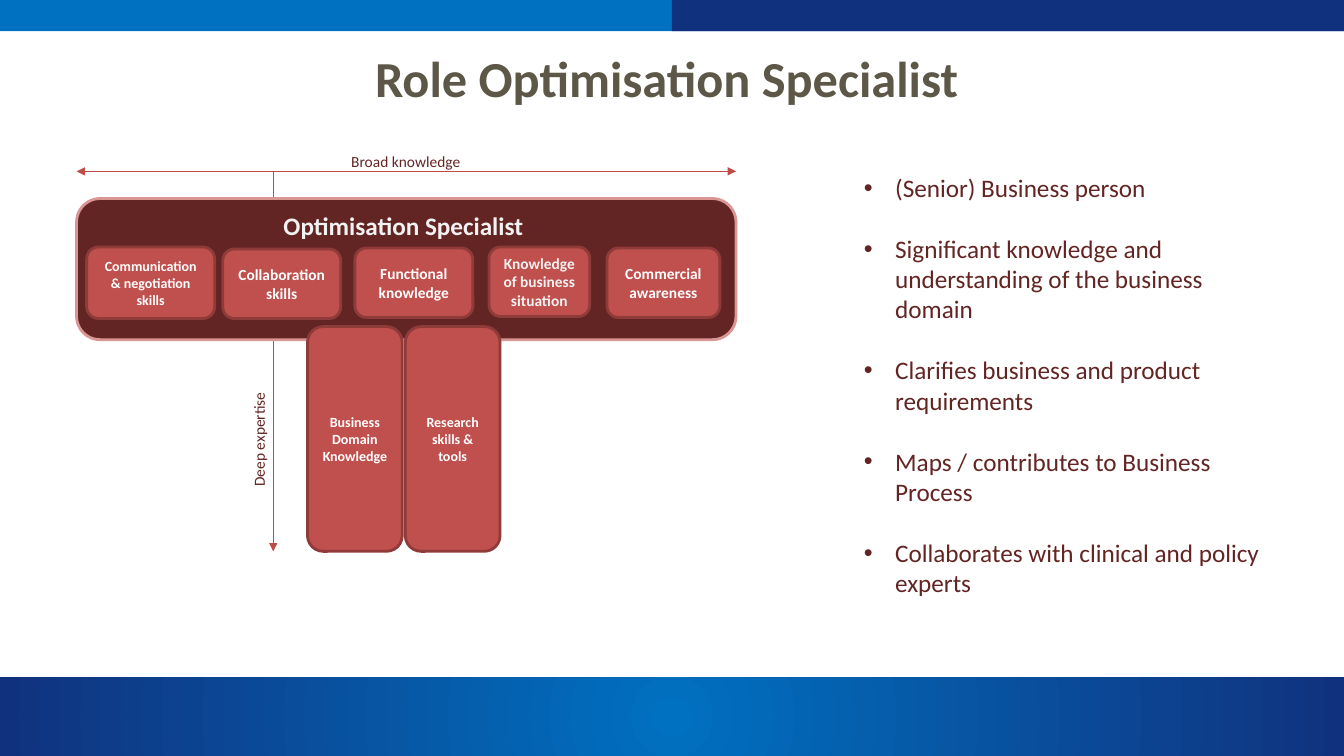
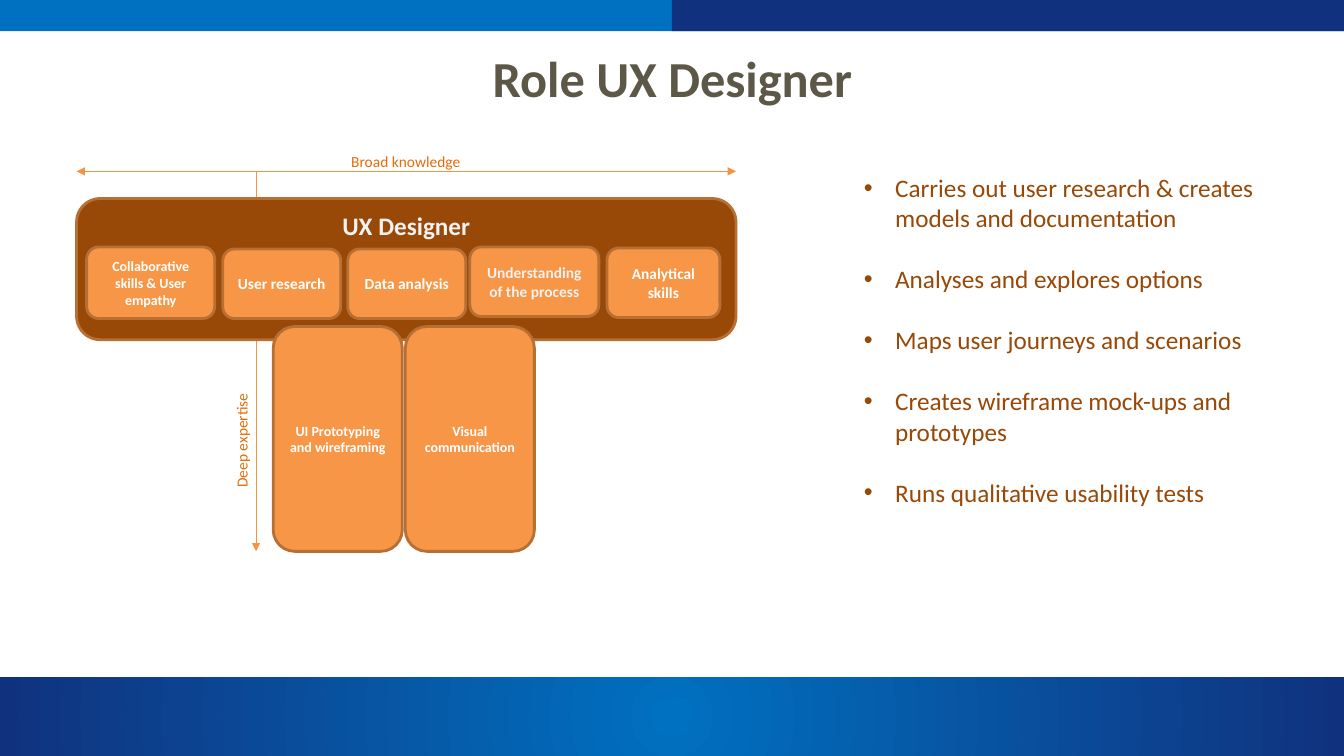
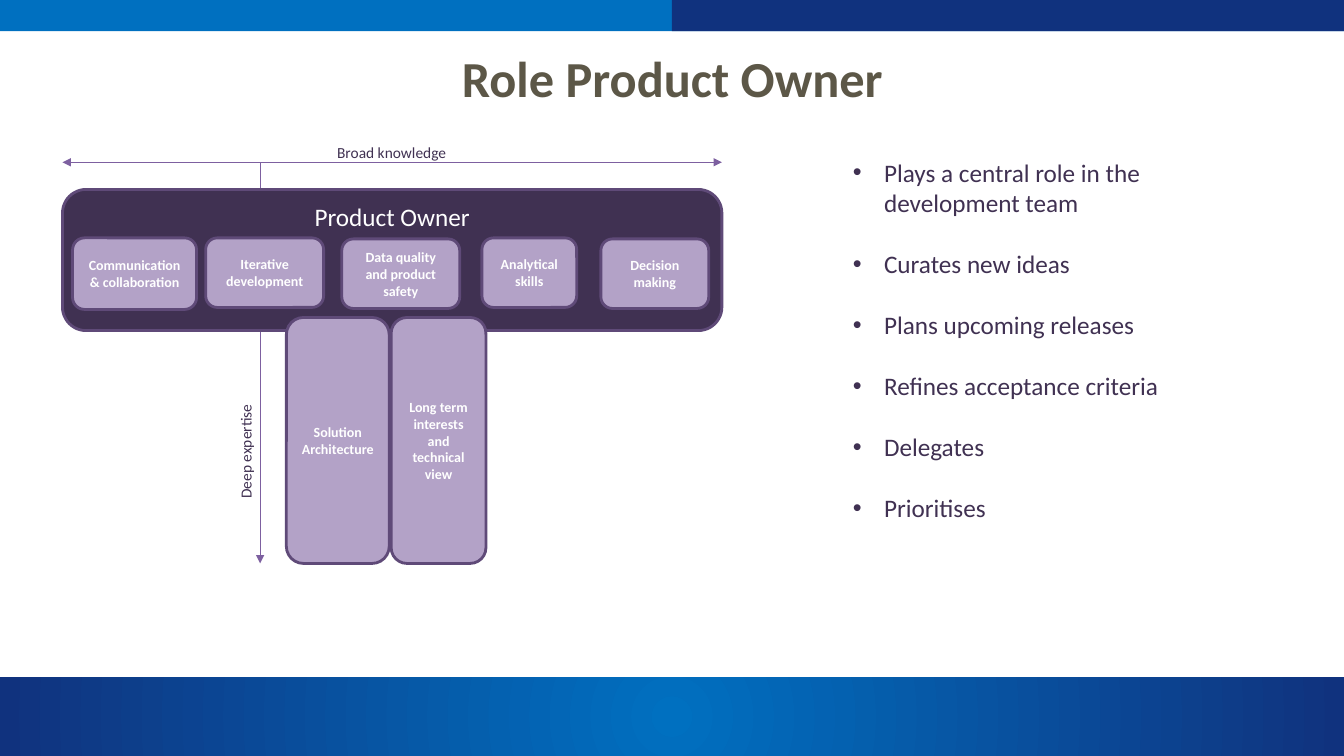
from pptx import Presentation
from pptx.dml.color import RGBColor
from pptx.enum import shapes, text
from pptx.oxml import parse_xml
from pptx.oxml import ns
from pptx.util import Inches, Pt

FONT = "Calibri"
SLIDE_W, SLIDE_H = 13.33, 7.5
BAR_W, BAR_H = 6.54, 1.4
COLOURS = {
    "blue": "0070C0", "navy": "10327E", "title": "5C5747",
    "white": "FFFFFF", "soft": "F2F2F2",
}

# Each role: colours, bar origin, skills across the bar, columns below it.
# Skills: left, top, width, text size, text colour, text
# Columns: left, width, text
ROLES = [
    {
        "title": "Role Optimisation Specialist ",
        "name": "Optimisation Specialist ", "name_bold": True, "name_colour": "soft",
        "colours": {"bar": "632523", "bar_line": "D99694", "box": "C0504D",
                    "box_line": "8E3B39", "arrow": "BF4C48",
                    "label": "632523", "bullet": "632523"},
        "origin": (0.76, 1.97), "depth_x": 2.71, "depth_label_top": 4.08,
        "skills": [
            (0.86, 2.45, 1.27, 10, "white", "Communication & negotiation skills"),
            (2.21, 2.47, 1.17, 11, "white", "Collaboration skills"),
            (3.52, 2.46, 1.17, 11, "white", "Functional knowledge"),
            (4.85, 2.45, 1.00, 11, "soft", "Knowledge of business situation"),
            (6.02, 2.46, 1.12, 11, "white", "Commercial awareness"),
        ],
        "column_h": 2.23,
        "columns": [(3.05, 0.94, "Business Domain Knowledge"),
                    (4.02, 0.94, "Research skills & tools")],
        "bullets_at": (8.47, 1.66, 4.35, 4.34),
        "bullets": [
            "(Senior) Business person",
            "Significant knowledge and understanding of the business domain",
            "Clarifies business and product requirements",
            "Maps / contributes to Business Process",
            "Collaborates with clinical and policy experts",
        ],
    },
    {
        "title": "Role UX Designer",
        "name": "UX Designer", "name_bold": True, "name_colour": "soft",
        "colours": {"bar": "984807", "bar_line": "B76F34", "box": "F79646",
                    "box_line": "B76F34", "arrow": "F69240",
                    "label": "E46C0A", "bullet": "984807"},
        "origin": (0.76, 1.97), "depth_x": 2.54, "depth_label_top": 4.09,
        "skills": [
            (0.86, 2.45, 1.27, 10, "white", "Collaborative skills & User empathy"),
            (2.21, 2.47, 1.17, 11, "white", "User research"),
            (3.45, 2.47, 1.17, 11, "white", "Data analysis"),
            (4.66, 2.45, 1.28, 11, "soft", "Understanding of the process"),
            (6.02, 2.46, 1.12, 11, "white", "Analytical skills"),
        ],
        "column_h": 2.23,
        "columns": [(2.71, 1.28, "UI Prototyping and wireframing"),
                    (4.02, 1.28, "Visual communication")],
        "bullets_at": (8.47, 1.66, 4.35, 3.74),
        "bullets": [
            "Carries out user research & creates models and documentation",
            "Analyses and explores options",
            "Maps user journeys and scenarios",
            "Creates wireframe mock-ups and prototypes",
            "Runs qualitative usability tests",
        ],
    },
    {
        "title": "Role Product Owner",
        "name": "Product Owner", "name_bold": False, "name_colour": "white",
        "colours": {"bar": "403152", "bar_line": "5F4A78", "box": "B3A2C7",
                    "box_line": "5F4A78", "arrow": "7D60A0",
                    "label": "403152", "bullet": "403152"},
        "origin": (0.62, 1.88), "depth_x": 2.58, "depth_label_top": 4.2,
        "skills": [
            (0.72, 2.36, 1.23, 10, "white", "Communication & collaboration"),
            (2.04, 2.36, 1.17, 10, "white", "Iterative development"),
            (3.39, 2.37, 1.17, 10, "white", "Data quality and product safety"),
            (4.78, 2.36, 0.94, 10, "white", "Analytical skills"),
            (5.96, 2.37, 1.07, 10, "white", "Decision making"),
        ],
        "column_h": 2.44,
        "columns": [(2.84, 1.02, "Solution Architecture"),
                    (3.88, 0.94, "Long term interests and technical view")],
        "bullets_at": (8.36, 1.51, 4.35, 4.04),
        "bullets": [
            "Plays a central role in the development team",
            "Curates new ideas",
            "Plans upcoming releases",
            "Refines acceptance criteria",
            "Delegates",
            "Prioritises",
        ],
    },
]


def rgb(hex_colour):
    return RGBColor.from_string(hex_colour)


def add_run(p, words, size, colour, bold=False):
    r = p.add_run()
    r.text = words
    r.font.name, r.font.size, r.font.bold = FONT, Pt(size), bold
    r.font.color.rgb = rgb(colour)


def add_band(s, left, top, width, height, colour):
    sp = s.shapes.add_shape(shapes.MSO_SHAPE.RECTANGLE, Inches(left), Inches(top),
                            Inches(width), Inches(height))
    sp.shadow.inherit = False
    sp.line.fill.background()
    sp.fill.solid()
    sp.fill.fore_color.rgb = rgb(colour)
    return sp


def add_radial_fill(sp, inner, outer):
    sp.fill.gradient()
    for stop, position, colour in zip(sp.fill.gradient_stops, (0, 1), (inner, outer)):
        stop.position = position
        stop.color.rgb = rgb(colour)
    grad = sp._element.spPr.find(ns.qn("a:gradFill"))
    grad.remove(grad.find(ns.qn("a:lin")))
    grad.append(parse_xml(
        f'<a:path {ns.nsdecls("a")} path="circle">'
        '<a:fillToRect l="50000" t="50000" r="50000" b="50000"/></a:path>'))


def add_label(s, left, top, width, height, words, size, colour, bold=False,
              align=text.PP_ALIGN.LEFT, anchor=text.MSO_ANCHOR.TOP, wrap=True):
    sp = s.shapes.add_textbox(Inches(left), Inches(top), Inches(width), Inches(height))
    tf = sp.text_frame
    tf.word_wrap, tf.vertical_anchor = wrap, anchor
    p = tf.paragraphs[0]
    p.alignment = align
    add_run(p, words, size, colour, bold)
    return sp


def add_box(s, left, top, width, height, fill, line, words, size, colour,
            bold=True, anchor=text.MSO_ANCHOR.MIDDLE):
    sp = s.shapes.add_shape(shapes.MSO_SHAPE.ROUNDED_RECTANGLE, Inches(left),
                            Inches(top), Inches(width), Inches(height))
    sp.shadow.inherit = False
    sp.fill.solid()
    sp.fill.fore_color.rgb = rgb(fill)
    sp.line.color.rgb = rgb(line)
    sp.line.width = Pt(2)
    tf = sp.text_frame
    tf.word_wrap, tf.vertical_anchor = True, anchor
    p = tf.paragraphs[0]
    p.alignment = text.PP_ALIGN.CENTER
    add_run(p, words, size, colour, bold)


def add_arrow(s, x1, y1, x2, y2, colour, ends):
    sp = s.shapes.add_connector(shapes.MSO_CONNECTOR.STRAIGHT, Inches(x1), Inches(y1),
                                Inches(x2), Inches(y2))
    sp.line.color.rgb = rgb(colour)
    sp.line.width = Pt(0.75)
    for end in ends:
        sp.line._get_or_add_ln().append(
            parse_xml(f'<a:{end} {ns.nsdecls("a")} type="triangle"/>'))
    sp._element.spPr.append(parse_xml(f'<a:effectLst {ns.nsdecls("a")}/>'))


def add_bullets(s, left, top, width, height, items, colour):
    sp = s.shapes.add_textbox(Inches(left), Inches(top), Inches(width), Inches(height))
    tf = sp.text_frame
    tf.word_wrap = True
    for i, item in enumerate(items):
        p = tf.paragraphs[0] if i == 0 else tf.add_paragraph()
        pPr = p._p.get_or_add_pPr()
        pPr.set("marL", str(Inches(0.31)))
        pPr.set("indent", str(Inches(-0.31)))
        pPr.append(parse_xml(f'<a:buFont {ns.nsdecls("a")} typeface="Arial"/>'))
        pPr.append(parse_xml(f'<a:buChar {ns.nsdecls("a")} char="•"/>'))
        if i:
            p.space_before = Pt(22)
        add_run(p, item, 18, colour)


def add_frame(s, title):
    # Footer and top bands, then the title
    footer = add_band(s, 0, 6.72, SLIDE_W, SLIDE_H - 6.72, COLOURS["navy"])
    add_radial_fill(footer, COLOURS["blue"], COLOURS["navy"])
    add_band(s, 0, 0, SLIDE_W, 0.31, COLOURS["blue"])
    add_band(s, SLIDE_W / 2, 0, SLIDE_W / 2, 0.31, COLOURS["navy"])
    add_label(s, 0.67, 0.3, 12, 0.93, title, 36, COLOURS["title"], True,
              text.PP_ALIGN.CENTER, text.MSO_ANCHOR.MIDDLE)


def add_t_shape(s, role):
    c = role["colours"]
    x, y = role["origin"]
    depth_x, arrow_y, column_y = role["depth_x"], y - 0.27, y + 1.27

    # Depth arrow behind the bar
    add_arrow(s, depth_x, arrow_y, depth_x, column_y + role["column_h"],
              c["arrow"], ["tailEnd"])

    # Bar with its skills
    add_box(s, x, y, BAR_W, BAR_H, c["bar"], c["bar_line"], role["name"], 18,
            COLOURS[role["name_colour"]], role["name_bold"], text.MSO_ANCHOR.TOP)
    for i, (left, top, width, size, colour, words) in enumerate(role["skills"]):
        add_box(s, left, top, width, 0.69 if i else 0.71, c["box"], c["box_line"],
                words, size, COLOURS[colour])

    # Columns of deep expertise
    for left, width, words in role["columns"]:
        add_box(s, left, column_y, width, role["column_h"], c["box"], c["box_line"],
                words, 10, COLOURS["white"])

    # Breadth arrow and axis labels
    add_arrow(s, x, arrow_y, x + BAR_W, arrow_y, c["arrow"], ["headEnd", "tailEnd"])
    add_label(s, x + 2.62, y - 0.51, 1.29, 0.29, "Broad knowledge", 11, c["label"],
              align=text.PP_ALIGN.CENTER, wrap=False)
    depth = add_label(s, depth_x - 0.84, role["depth_label_top"], 1.4, 0.29,
                      "Deep expertise", 11, c["label"])
    depth.rotation = 270


def main():
    prs = Presentation()
    prs.slide_width, prs.slide_height = Inches(SLIDE_W), Inches(SLIDE_H)
    for role in ROLES:
        s = prs.slides.add_slide(prs.slide_layouts[6])
        add_frame(s, role["title"])
        add_t_shape(s, role)
        add_bullets(s, *role["bullets_at"], role["bullets"], role["colours"]["bullet"])
    prs.save("out.pptx")


if __name__ == "__main__":
    main()
